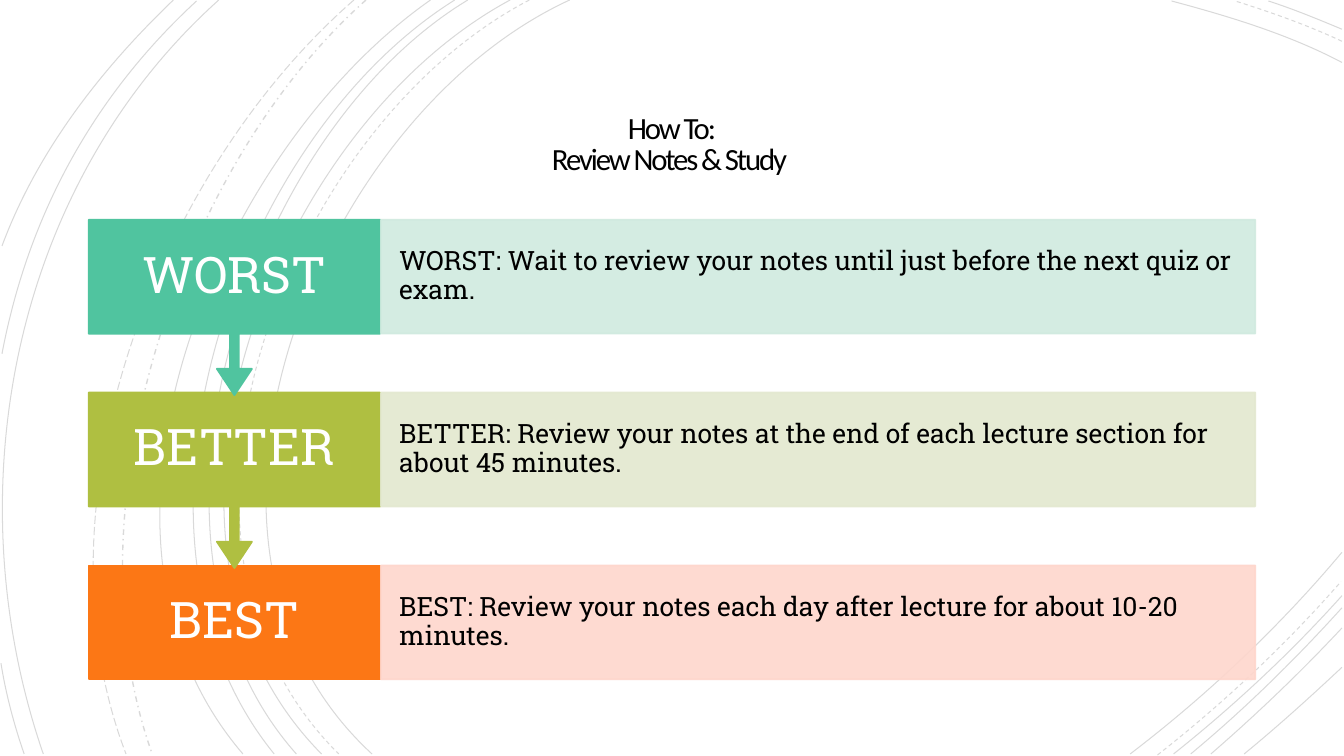
from dataclasses import dataclass

from lxml.etree import SubElement
from pptx import Presentation
from pptx.dml.color import RGBColor
from pptx.enum.dml import MSO_LINE_DASH_STYLE as Dash
from pptx.enum.shapes import MSO_SHAPE as Preset
from pptx.enum.text import MSO_ANCHOR as Anchor
from pptx.enum.text import MSO_AUTO_SIZE as AutoSize
from pptx.enum.text import PP_ALIGN as Align
from pptx.oxml.ns import qn
from pptx.util import Inches, Pt

HEADING = "How To:\vReview Notes & Study "

STEPS = [
    ("WORST", "WORST: Wait to review your notes until just before the next quiz or exam.", "50C49F", "D0EADF"),
    ("BETTER", "BETTER: Review your notes at the end of each lecture section for about 45 minutes.", "AFBF41", "E3E8CF"),
    ("BEST", "BEST: Review your notes each day after lecture for about 10-20 minutes.", "FC7715", "FED6CC"),
]

ARCS = {
    (Dash.SOLID, 0.75): [
        [(5.65, 0), (3.15, 1.15), (1.43, 5.4), (3.69, 7.48)],
        [(13.31, 0.62), (12.78, 0.34), (12.18, 0.16), (11.62, 0.01)],
        [(11.21, 7.48), (11.97, 6.9), (12.69, 6.22), (13.31, 5.48)],
        [(5.06, 0), (2.7, 1.27), (1.1, 5.37), (3.19, 7.48)],
        [(13.31, 0.29), (13.07, 0.19), (12.83, 0.09), (12.58, 0.01)],
        [(11.64, 7.48), (12.23, 7.01), (12.8, 6.48), (13.31, 5.91)],
        [(4.64, 0), (2.44, 1.33), (1.1, 5.41), (2.94, 7.48)],
        [(11.81, 7.48), (12.34, 7.04), (12.84, 6.55), (13.31, 6.03)],
        [(4.51, 0), (2.31, 1.38), (0.97, 5.33), (2.72, 7.48)],
        [(12.01, 7.48), (12.46, 7.09), (12.9, 6.67), (13.31, 6.23)],
        [(4.27, 0), (2.17, 1.47), (0.53, 5.29), (2.41, 7.48)],
        [(12.34, 7.48), (12.67, 7.21), (12.99, 6.92), (13.31, 6.62)],
        [(2.17, 0), (0.11, 1.85), (-0.46, 4.9), (0.43, 7.48)],
        [(1.95, 0.01), (0.92, 0.96), (0.28, 2.14), (0.02, 3.51)],
        [(0.01, 6.58), (0.06, 6.89), (0.14, 7.19), (0.24, 7.48)],
        [(1.72, 0), (1, 0.69), (0.37, 1.5), (0.02, 2.44)],
    ],
    (Dash.DASH, 0.75): [
        [(5.25, 0), (2.85, 1.25), (1.23, 5.37), (3.36, 7.48)],
        [(13.31, 0.41), (12.97, 0.25), (12.6, 0.12), (12.25, 0.01)],
        [(11.48, 7.49), (12.13, 6.98), (12.75, 6.4), (13.3, 5.77)],
    ],
    (Dash.DASH_DOT, 1): [[(3.63, 0), (1.76, 1.66), (0.65, 5.09), (1.51, 7.48)]],
    (Dash.LONG_DASH, 0.75): [[(3.51, 0), (1.57, 1.69), (0.29, 4.99), (1.25, 7.48)]],
}


@dataclass(frozen=True)
class Theme:
    ink: str = "000000"
    paper: str = "FFFFFF"
    heading_font: str = "Calibri"
    step_font: str = "Roboto Slab"
    heading_size: float = 22
    label_size: float = 36
    advice_size: float = 19
    border: float = 1.25
    arc_opacity: int = 15
    advice_opacity: int = 90


THEME = Theme()
SLIDE_W, SLIDE_H = 13.33, 7.5
LEFT, TOP, PITCH = 0.88, 2.18, 1.715
LABEL_W, ADVICE_W = 2.89, 8.67
ADVICE_LEFT = 3.78
ROW_H, CALLOUT_H = 1.13, 1.74
UNITS_PER_INCH = 100


def set_color(fill, color, opacity=100):
    fill.solid()
    fill.fore_color.rgb = RGBColor.from_string(color)
    if opacity < 100:
        swatch = fill._xPr.find(".//" + qn("a:srgbClr"))
        SubElement(swatch, qn("a:alpha"), val=str(opacity * 1000))


def write(shape, text, *, font, size, color, align, spacing, insets, tracking=None):
    frame = shape.text_frame
    frame.word_wrap = True
    frame.auto_size = AutoSize.NONE
    frame.vertical_anchor = Anchor.MIDDLE
    frame.margin_left = frame.margin_right = Inches(insets[0])
    frame.margin_top = frame.margin_bottom = Inches(insets[1])
    frame.text = text
    paragraph = frame.paragraphs[0]
    paragraph.alignment = align
    paragraph.line_spacing = spacing
    for run in paragraph.runs:
        run.font.name = font
        run.font.size = Pt(size)
        run.font.color.rgb = RGBColor.from_string(color)
        if tracking is not None:
            run.font._element.set("spc", str(int(tracking * 100)))


def add_arc(slide, points, dash, weight):
    start, *controls = [(round(x * UNITS_PER_INCH), round(y * UNITS_PER_INCH)) for x, y in points]
    builder = slide.shapes.build_freeform(*start, scale=Inches(1) / UNITS_PER_INCH)
    builder.add_line_segments(controls, close=False)
    arc = builder.convert_to_shape()
    outline = arc._element.find(".//" + qn("a:path"))
    curve = SubElement(outline, qn("a:cubicBezTo"))
    for segment in outline.findall(qn("a:lnTo")):
        curve.append(segment[0])
        outline.remove(segment)
    arc.shadow.inherit = False
    arc.fill.background()
    set_color(arc.line.fill, THEME.ink, THEME.arc_opacity)
    arc.line.width = Pt(weight)
    arc.line.dash_style = dash


def add_box(slide, preset, left, top, width, height, color, opacity=100):
    box = slide.shapes.add_shape(preset, *map(Inches, (left, top, width, height)))
    box.shadow.inherit = False
    set_color(box.fill, color, opacity)
    set_color(box.line.fill, color, opacity)
    box.line.width = Pt(THEME.border)
    return box


def add_step(slide, row):
    label, advice, strong, pale = STEPS[row]
    top = TOP + row * PITCH
    if row == len(STEPS) - 1:
        label_box = add_box(slide, Preset.RECTANGLE, LEFT, top, LABEL_W, ROW_H, strong)
    else:
        label_box = add_box(slide, Preset.DOWN_ARROW_CALLOUT, LEFT, top, LABEL_W, CALLOUT_H, strong)
        for index, share in enumerate((0.05, 0.1, 0.15, 0.65)):
            label_box.adjustments[index] = share
    write(label_box, label, font=THEME.step_font, size=THEME.label_size, color=THEME.paper,
          align=Align.CENTER, spacing=0.9, insets=(0.21, 0.28))
    advice_box = add_box(slide, Preset.RECTANGLE, ADVICE_LEFT, top, ADVICE_W, ROW_H, pale, THEME.advice_opacity)
    write(advice_box, advice, font=THEME.step_font, size=THEME.advice_size, color=THEME.ink,
          align=Align.LEFT, spacing=0.9, insets=(0.18, 0.26))


def main():
    deck = Presentation()
    deck.slide_width, deck.slide_height = Inches(SLIDE_W), Inches(SLIDE_H)
    slide = deck.slides.add_slide(deck.slide_layouts[5])
    set_color(slide.background.fill, THEME.paper)

    for (dash, weight), arcs in ARCS.items():
        for points in arcs:
            add_arc(slide, points, dash, weight)

    heading = slide.shapes.title
    heading.left, heading.top, heading.width, heading.height = map(Inches, (1.92, 0.87, 9.49, 1.15))
    write(heading, HEADING, font=THEME.heading_font, size=THEME.heading_size, color=THEME.ink,
          align=Align.CENTER, spacing=0.85, insets=(0.25, 0.25), tracking=-1.5)

    for row in reversed(range(len(STEPS))):
        add_step(slide, row)

    deck.save("out.pptx")


if __name__ == "__main__":
    main()
